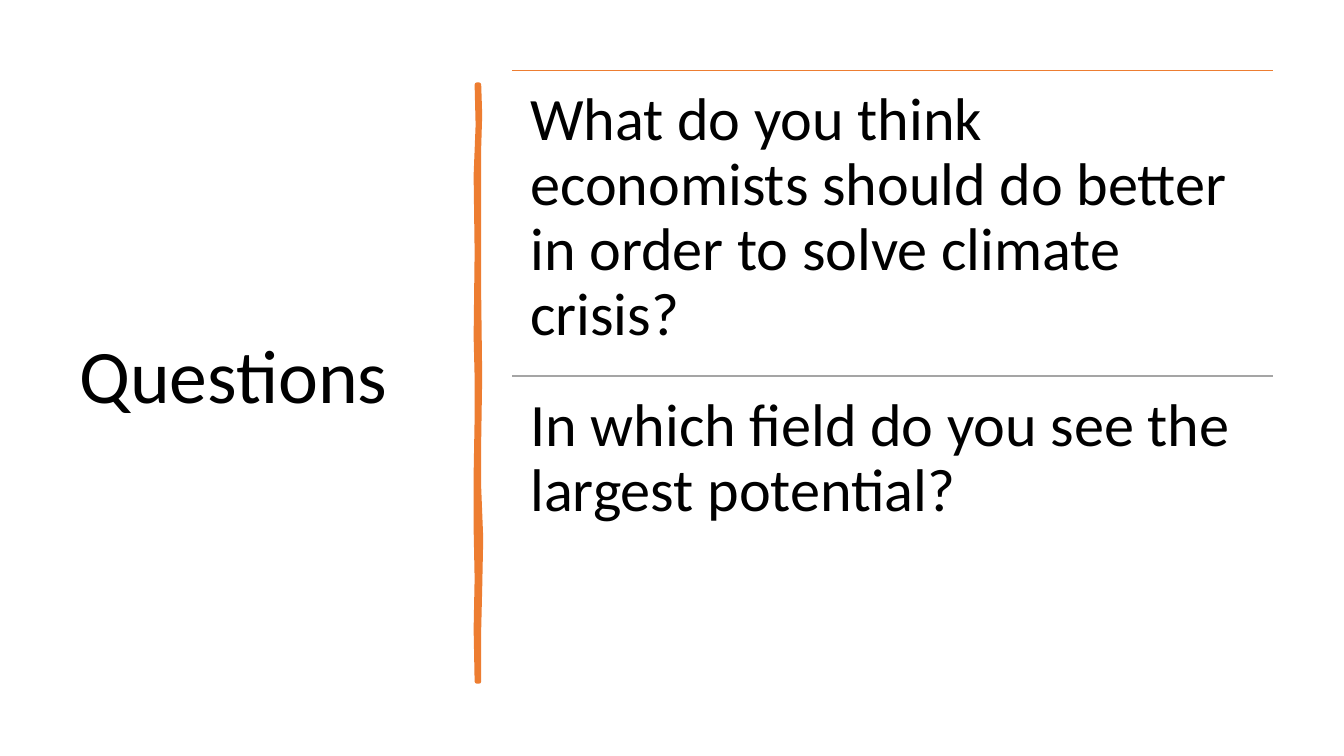
from dataclasses import dataclass

from lxml.etree import SubElement
from pptx import Presentation
from pptx.dml.color import RGBColor
from pptx.enum.shapes import MSO_CONNECTOR
from pptx.enum.text import MSO_ANCHOR
from pptx.oxml.ns import qn
from pptx.util import Inches, Pt


@dataclass(frozen=True)
class Theme:
    """Colours, font and sizes of the slide."""
    font: str = "Calibri"
    text: RGBColor = RGBColor(0x00, 0x00, 0x00)
    accent: RGBColor = RGBColor(0xED, 0x7D, 0x31)
    muted: RGBColor = RGBColor(0xA5, 0xA5, 0xA5)
    title_size: Pt = Pt(54)
    question_size: Pt = Pt(43)
    rule_width: Pt = Pt(1)
    brush_width: Pt = Pt(3.25)


@dataclass(frozen=True)
class Box:
    """A region of the slide in inches."""
    left: float
    top: float
    width: float
    height: float


THEME = Theme()
TITLE_BOX = Box(0.69, 0.7, 3.74, 6.11)
BRUSH_BOX = Box(4.73, 0.84, 0.02, 5.92)
QUESTIONS_BOX = Box(5.08, 0.7, 7.55, 6.06)
QUESTIONS = (
    ("What do you think economists should do better in order to solve climate crisis?", THEME.accent),
    ("In which field do you see the largest potential?", THEME.muted),
)
RIGHT_EDGE = ((0, 0), (0.01, 0.3), (0, 0.62), (0, 1.42), (0, 2.1), (0.01, 2.9), (0, 3.52),
              (0, 4), (0.02, 4.5), (0.01, 5), (0, 5.4), (0, 5.92))
LEFT_EDGE = ((0, 5.92), (-0.01, 5.4), (0, 4.9), (-0.01, 4.4), (-0.01, 3.87), (0, 3.31),
             (0, 2.9), (-0.01, 2.5), (0, 1.66), (-0.01, 0.9), (0.01, 0.4), (0, 0))


def add_text(slide, box, text, size, inset=None, anchor=MSO_ANCHOR.TOP):
    """Write one paragraph into a text box filling the given box."""
    shape = slide.shapes.add_textbox(*map(Inches, (box.left, box.top, box.width, box.height)))
    frame = shape.text_frame
    frame.word_wrap = True
    frame.vertical_anchor = anchor
    if inset is not None:
        frame.margin_left = frame.margin_right = Inches(inset)
        frame.margin_top = frame.margin_bottom = Inches(inset)
    paragraph = frame.paragraphs[0]
    paragraph.text = text
    paragraph.line_spacing = 0.9
    paragraph.font.name = THEME.font
    paragraph.font.size = size
    paragraph.font.color.rgb = THEME.text


def add_rule(slide, box, color):
    """Draw a thin rule along the top of the box."""
    rule = slide.shapes.add_connector(
        MSO_CONNECTOR.STRAIGHT, Inches(box.left), Inches(box.top),
        Inches(box.left + box.width), Inches(box.top))
    rule.line.color.rgb = color
    rule.line.width = THEME.rule_width
    SubElement(rule._element.spPr, qn("a:effectLst"))


def add_title(slide, box):
    """Place the title, centred vertically in the box."""
    add_text(slide, box, "Questions", THEME.title_size, anchor=MSO_ANCHOR.MIDDLE)


def add_brush_stroke(slide, box):
    """Draw the wavy upright divider in the box."""
    points = [(Inches(box.left + box.width + shift), Inches(box.top + drop)) for shift, drop in RIGHT_EDGE]
    points += [(Inches(box.left + shift), Inches(box.top + drop)) for shift, drop in LEFT_EDGE]
    builder = slide.shapes.build_freeform(*points[0])
    builder.add_line_segments(points[1:], close=True)
    stroke = builder.convert_to_shape()
    stroke.shadow.inherit = False
    stroke.fill.solid()
    stroke.fill.fore_color.rgb = THEME.accent
    stroke.line.color.rgb = THEME.accent
    stroke.line.width = THEME.brush_width
    SubElement(stroke.line._get_or_add_ln(), qn("a:round"))


def add_questions(slide, box):
    """Stack the questions in equal rows, each under its rule."""
    height = box.height / len(QUESTIONS)
    for index, (question, color) in enumerate(QUESTIONS):
        row = Box(box.left, box.top + index * height, box.width, height)
        add_rule(slide, row, color)
        add_text(slide, row, question, THEME.question_size, inset=0.18)


def main():
    """Build the slide and save the deck."""
    deck = Presentation()
    deck.slide_width, deck.slide_height = Inches(13.33), Inches(7.5)
    slide = deck.slides.add_slide(deck.slide_layouts[6])
    add_title(slide, TITLE_BOX)
    add_brush_stroke(slide, BRUSH_BOX)
    add_questions(slide, QUESTIONS_BOX)
    deck.save("out.pptx")


if __name__ == "__main__":
    main()
